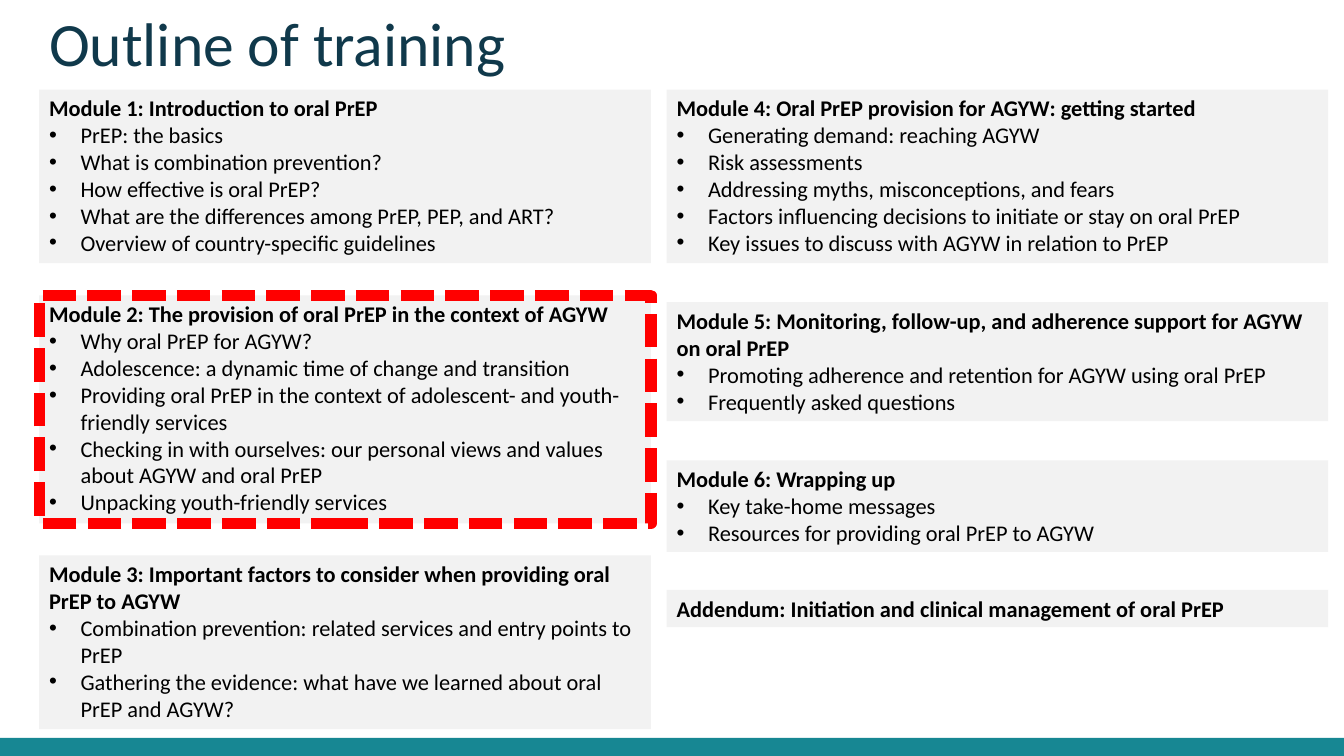
from pptx import Presentation
from pptx.util import Pt
from pptx.dml.color import RGBColor as RGB
from pptx.enum.dml import MSO_LINE as Dash
from pptx.enum.shapes import MSO_SHAPE as Kind
from pptx.enum.text import MSO_ANCHOR as Anchor, MSO_AUTO_SIZE as Fit, PP_ALIGN as Align
from pptx.oxml.ns import qn
from lxml.etree import SubElement as Sub


def tint(code):
    return RGB.from_string(code)


class Deck:
    font = "Calibri"
    ink, navy, teal, grey, red = "000000", "10394B", "178793", "F2F2F2", "FF0000"
    size, big, indent = 16, 44, 22.5

    def __init__(self, wide, high):
        self.prs = Presentation()
        self.prs.slide_width, self.prs.slide_height = Pt(wide), Pt(high)
        self.slide = self.prs.slides.add_slide(self.prs.slide_layouts[6])

    def run(self, para, text, size, color, bold=False):
        run = para.add_run()
        run.text = text
        run.font.name, run.font.size, run.font.bold = self.font, Pt(size), bold
        run.font.color.rgb = tint(color)

    def title(self, text, *box):
        frame = self.slide.shapes.add_textbox(*map(Pt, box)).text_frame
        frame.word_wrap = True
        para = frame.paragraphs[0]
        para.line_spacing = Pt(44.8)
        self.run(para, text, self.big, self.navy)

    def rect(self, color, *box):
        shape = self.slide.shapes.add_shape(Kind.RECTANGLE, *map(Pt, box))
        shape.shadow.inherit = False
        shape.fill.solid()
        shape.fill.fore_color.rgb = tint(color)
        shape.line.fill.background()
        return shape

    def bullet(self, para):
        props = para._p.get_or_add_pPr()
        props.set("marL", str(Pt(self.indent)))
        props.set("indent", str(-Pt(self.indent)))
        Sub(props, qn("a:buFont"), typeface="Arial")
        Sub(props, qn("a:buChar"), char="•")

    def card(self, head, items, *box):
        shape = self.rect(self.grey, *box)
        frame = shape.text_frame
        frame.word_wrap, frame.auto_size = True, Fit.SHAPE_TO_FIT_TEXT
        frame.vertical_anchor = Anchor.TOP
        para = frame.paragraphs[0]
        para.alignment = Align.LEFT
        self.run(para, head, self.size, self.ink, True)
        for item in items:
            para = frame.add_paragraph()
            para.alignment = Align.LEFT
            self.bullet(para)
            self.run(para, item, self.size, self.ink)
        return shape

    def mark(self, shape):
        line = shape.line
        line.color.rgb = tint(self.red)
        line.width, line.dash_style = Pt(8), Dash.SQUARE_DOT
        Sub(line._get_or_add_ln(), qn("a:round"))


# Module columns: left, width, then cards with top, height, heading, items
LEFT = (28, 437, [
    (64, 124, "Module 1: Introduction to oral PrEP", [
        "PrEP: the basics",
        "What is combination prevention?",
        "How effective is oral PrEP?",
        "What are the differences among PrEP, PEP, and ART?",
        "Overview of country-specific guidelines"]),
    (211, 162.8, "Module 2: The provision of oral PrEP in the context of AGYW", [
        "Why oral PrEP for AGYW?",
        "Adolescence: a dynamic time of change and transition",
        "Providing oral PrEP in the context of adolescent- and youth-friendly services",
        "Checking in with ourselves: our personal views and values about AGYW and oral PrEP",
        "Unpacking youth-friendly services"]),
    (396.8, 124, "Module 3: Important factors to consider when providing oral PrEP to AGYW", [
        "Combination prevention: related services and entry points to PrEP",
        "Gathering the evidence: what have we learned about oral PrEP and AGYW?"]),
])
RIGHT = (476.2, 472.5, [
    (64, 124, "Module 4: Oral PrEP provision for AGYW: getting started", [
        "Generating demand: reaching AGYW",
        "Risk assessments",
        "Addressing myths, misconceptions, and fears",
        "Factors influencing decisions to initiate or stay on oral PrEP",
        "Key issues to discuss with AGYW in relation to PrEP"]),
    (215.8, 85, "Module 5: Monitoring, follow-up, and adherence support for AGYW on oral PrEP", [
        "Promoting adherence and retention for AGYW using oral PrEP",
        "Frequently asked questions"]),
    (328.8, 65.5, "Module 6: Wrapping up", [
        "Key take-home messages",
        "Resources for providing oral PrEP to AGYW"]),
    (421.4, 26.6, "Addendum: Initiation and clinical management of oral PrEP", []),
])


def main():
    deck = Deck(960, 540)

    # Footer band and title
    deck.rect(deck.teal, 0, 527, 960, 13)
    deck.title("Outline of training", 28, 8, 864, 76)

    # Module cards, with the current one marked
    for left, wide, cards in (LEFT, RIGHT):
        for top, high, head, items in cards:
            card = deck.card(head, items, left, top, wide, high)
            if head.startswith("Module 2"):
                deck.mark(card)

    deck.prs.save("out.pptx")


if __name__ == "__main__":
    main()
